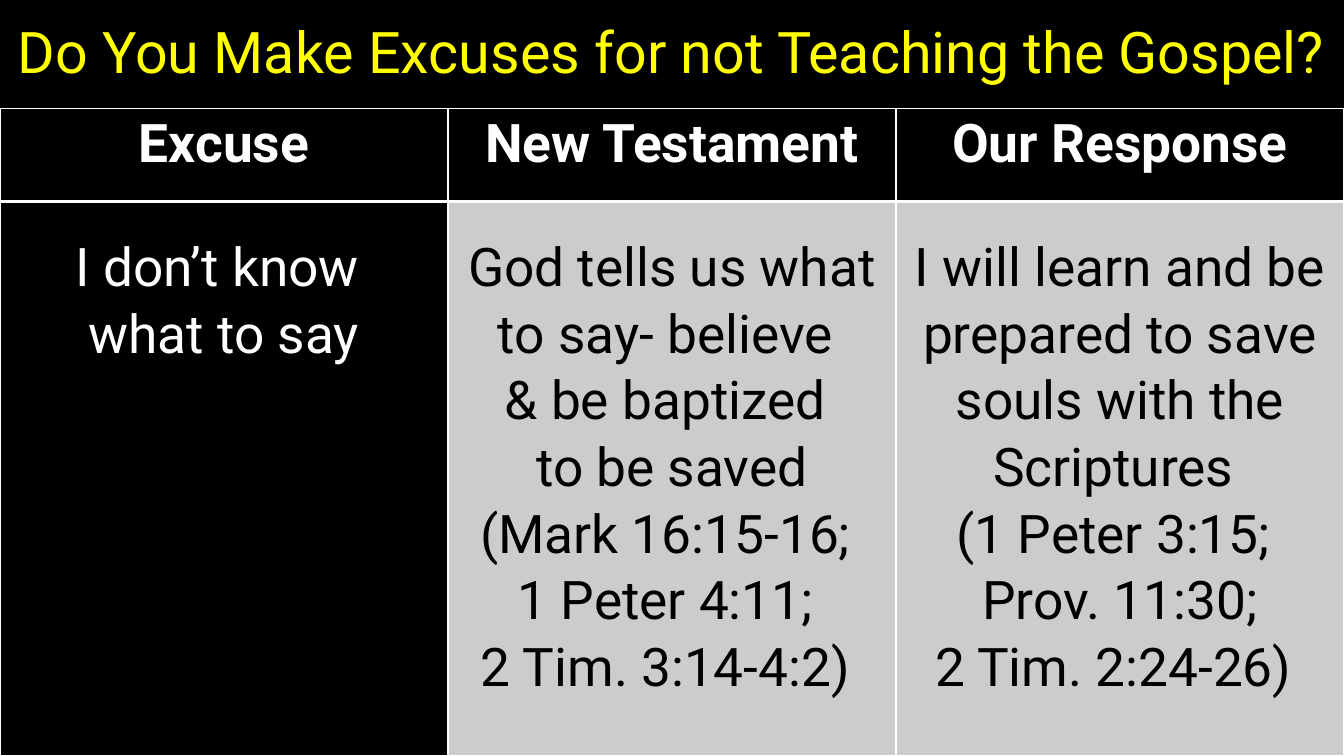
from lxml import etree
from pptx import Presentation
from pptx.dml.color import RGBColor
from pptx.enum import text
from pptx.oxml import ns
from pptx.util import Inches, Pt

BLACK = RGBColor(0, 0, 0)
WHITE = RGBColor(255, 255, 255)
YELLOW = RGBColor(255, 255, 0)
GREY = RGBColor(204, 204, 204)
FACE = "Roboto"
WIDE, HIGH, TOP, HEAD = 13.33, 7.5, 1.08, 0.92

ROWS = [
    [["Excuse"], ["New Testament"], ["Our Response"]],
    [
        ["I don’t know ", "what to say"],
        ["God tells us what to say- believe ", "& be baptized ", "to be saved",
         "(Mark 16:15-16; ", "1 Peter 4:11; ", "2 Tim. 3:14-4:2) "],
        ["I will learn and be prepared to save souls with the Scriptures ",
         "(1 Peter 3:15; ", "Prov. 11:30;", "2 Tim. 2:24-26) "],
    ],
]


def write(frame, lines, size, color, space, bold=False):
    frame.text = "\n".join(lines)
    for para in frame.paragraphs:
        para.alignment = text.PP_ALIGN.CENTER
        para.line_spacing = space
        font = para.font
        font.name, font.size, font.bold = FACE, Pt(size), bold
        font.color.rgb = color


def add_title(slide, words):
    box = slide.shapes.add_textbox(0, 0, Inches(WIDE), Inches(TOP))
    frame = box.text_frame
    frame.word_wrap = True
    frame.vertical_anchor = text.MSO_ANCHOR.MIDDLE
    write(frame, [words], 41, YELLOW, 0.9)


def edge(cell, side, width):
    props = cell._tc.get_or_add_tcPr()
    line = etree.SubElement(props, ns.qn("a:ln" + side), w=str(Pt(width)))
    fill = etree.SubElement(line, ns.qn("a:solidFill"))
    etree.SubElement(fill, ns.qn("a:srgbClr"), val=str(WHITE))


def style(cell, lines, head, first):
    thick = {"B": 3} if head else {"T": 3}
    for side in "LRTB":
        edge(cell, side, thick.get(side, 1))
    dark = head or first
    cell.fill.solid()
    cell.fill.fore_color.rgb = BLACK if dark else GREY
    cell.margin_left = cell.margin_right = Inches(0.07)
    cell.margin_top = Inches(0 if head else 0.31)
    cell.margin_bottom = 0
    write(cell.text_frame, lines, 38, WHITE if dark else BLACK, 1.07, head)


def add_grid(slide, rows):
    tall = HIGH - TOP
    table = slide.shapes.add_table(
        len(rows), len(rows[0]), 0, Inches(TOP), Inches(WIDE), Inches(tall)
    ).table
    table.horz_banding = False
    table.rows[0].height = Inches(HEAD)
    table.rows[1].height = Inches(tall - HEAD)
    for r, row in enumerate(rows):
        for c, lines in enumerate(row):
            style(table.cell(r, c), lines, r == 0, c == 0)


def main():
    deck = Presentation()
    deck.slide_width, deck.slide_height = Inches(WIDE), Inches(HIGH)
    slide = deck.slides.add_slide(deck.slide_layouts[6])
    back = slide.background.fill
    back.solid()
    back.fore_color.rgb = BLACK
    add_title(slide, "Do You Make Excuses for not Teaching the Gospel?")
    add_grid(slide, ROWS)
    deck.save("out.pptx")


if __name__ == "__main__":
    main()
